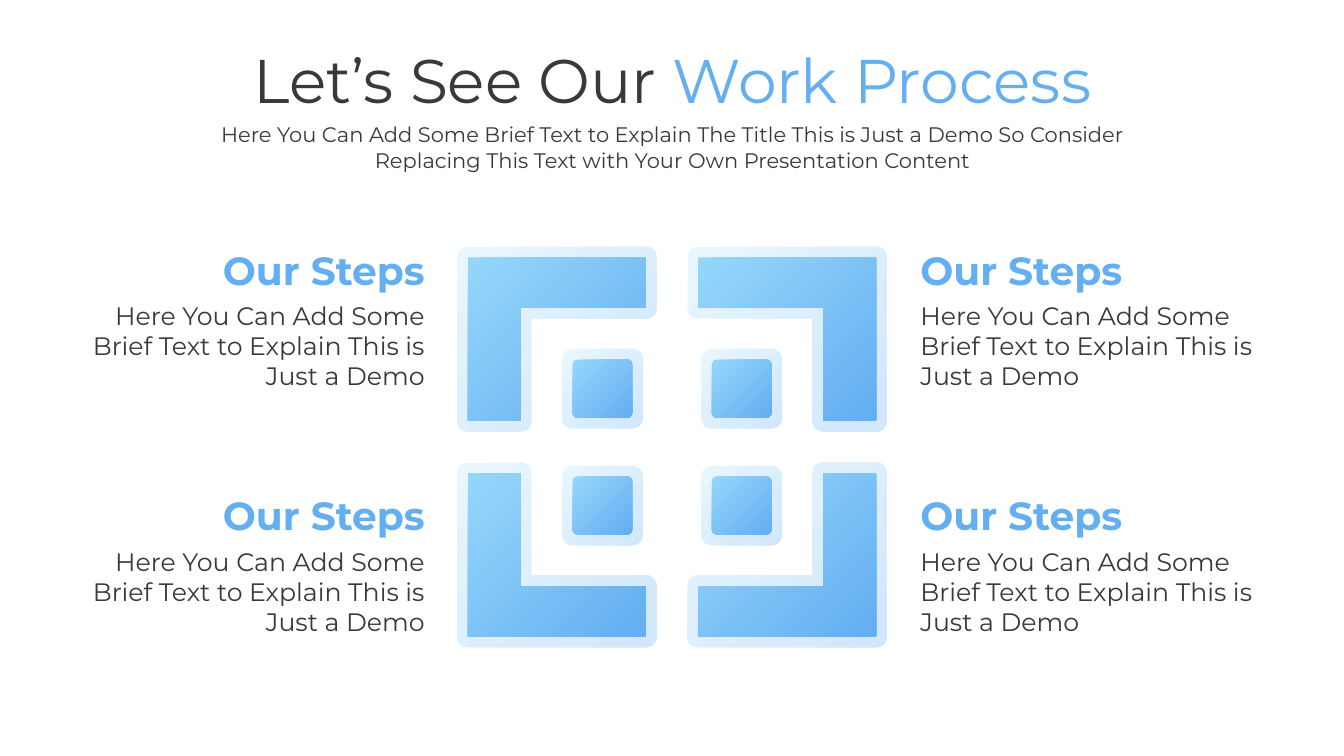
from itertools import product
from math import cos, pi, sin

from lxml import etree
from pptx import Presentation, util as u
from pptx.dml import color
from pptx.enum import shapes, text
from pptx.oxml import ns

W, H = u.Inches(13.33), u.Inches(7.5)
FONT = "Montserrat"
DARK, BLUE = "3B3838", "64AEF2"
CORE, HALO = (BLUE, "95D7FA"), ("D1E7FB", "E8F6FE")
MID_X, MID_Y = 50, 59.13
INSET_X, INSET_Y = 0.79, 1.4
RADIUS = u.Inches(0.1)
ARC_STEPS = 8
DEMO = "Here You Can Add Some Brief Text to Explain This is Just a Demo"
SUBTITLE = ("Here You Can Add Some Brief Text to Explain The Title This is Just a Demo "
            "So Consider Replacing This Text with Your Own Presentation Content")


def rgb(value):
    return color.RGBColor.from_string(value)


def px(share):
    return round(W * share / 100)


def py(share):
    return round(H * share / 100)


def add_text(s, box, runs, size, align, bold=False):
    left, top, width, height = box
    shape = s.shapes.add_textbox(px(left), py(top), px(width), py(height))
    tf = shape.text_frame
    tf.word_wrap = True
    tf.auto_size = text.MSO_AUTO_SIZE.SHAPE_TO_FIT_TEXT
    p = tf.paragraphs[0]
    p.alignment = align
    p.font.name, p.font.size, p.font.bold = FONT, u.Pt(size), bold
    for words, shade in runs:
        r = p.add_run()
        r.text = words
        r.font.color.rgb = rgb(shade)


def paint(shape, shades):
    shape.shadow.inherit = False
    shape.line.fill.background()
    shape.fill.gradient()
    for stop, shade in zip(shape.fill.gradient_stops, shades):
        stop.color.rgb = rgb(shade)
    grad = shape._element.spPr.find(ns.qn("a:gradFill"))
    grad.remove(grad.find(ns.qn("a:lin")))
    radial = etree.SubElement(grad, ns.qn("a:path"), {"path": "circle"})
    etree.SubElement(radial, ns.qn("a:fillToRect"), {"l": "100000", "t": "100000"})
    etree.SubElement(grad, ns.qn("a:tileRect"), {"r": "-100000", "b": "-100000"})


def toward(start, end, distance):
    dx, dy = end[0] - start[0], end[1] - start[1]
    length = abs(dx) + abs(dy)
    return start[0] + dx * distance / length, start[1] + dy * distance / length


def round_corner(before, corner, after):
    a, b = toward(corner, before, RADIUS), toward(corner, after, RADIUS)
    for step in range(ARC_STEPS + 1):
        angle = pi / 2 * step / ARC_STEPS
        yield tuple(a[i] + b[i] - corner[i] + cos(angle) * (corner[i] - b[i])
                    + sin(angle) * (corner[i] - a[i]) for i in (0, 1))


def add_bracket(s, side, level, inset, shades, rounded):
    far_x, arm_x, near_x = 15.98 - inset * INSET_X, 10.47 + inset * INSET_X, 1.16 + inset * INSET_X
    far_y, arm_y, near_y = 26.47 - inset * INSET_Y, 17 + inset * INSET_Y, 2.07 + inset * INSET_Y
    offsets = [(far_x, far_y), (near_x, far_y), (near_x, arm_y),
               (arm_x, arm_y), (arm_x, near_y), (far_x, near_y)]
    corners = [(px(MID_X + side * x), py(MID_Y + level * y)) for x, y in offsets]
    points = []
    for i, corner in enumerate(corners):
        if rounded and i != 3:
            points += round_corner(corners[i - 1], corner, corners[(i + 1) % 6])
        else:
            points.append(corner)
    builder = s.shapes.build_freeform(*points[0])
    builder.add_line_segments(points[1:], close=True)
    paint(builder.convert_to_shape(), shades)


def add_tile(s, side, level, inset, shades, rounding):
    width, height = 6 - 2 * inset * INSET_X, 10.47 - 2 * inset * INSET_Y
    left = MID_X + side * 5.18 - width / 2
    top = MID_Y + level * 7.73 - height / 2
    shape = s.shapes.add_shape(shapes.MSO_SHAPE.ROUNDED_RECTANGLE,
                               px(left), py(top), px(width), py(height))
    shape.adjustments[0] = rounding
    paint(shape, shades)


def add_step(s, side, level):
    left, width, align = ((3.68, 28.66, text.PP_ALIGN.RIGHT) if side < 0
                          else (67.74, 28.06, text.PP_ALIGN.LEFT))
    top = 31.87 if level < 0 else 64.4
    add_text(s, (left, top, width, 7.6), [("Our Steps", BLUE)], 28, align, bold=True)
    add_text(s, (left, top + 7.2, width, 13.47), [(DEMO, DARK)], 18, align)


def main():
    prs = Presentation()
    prs.slide_width, prs.slide_height = W, H
    s = prs.slides.add_slide(prs.slide_layouts[6])
    for side, level in product((-1, 1), repeat=2):
        add_step(s, side, level)
        add_bracket(s, side, level, 0, HALO, rounded=True)
        add_bracket(s, side, level, 1, CORE, rounded=False)
        add_tile(s, side, level, 0, HALO, 0.13)
        add_tile(s, side, level, 1, CORE, 0.08)
    center = text.PP_ALIGN.CENTER
    add_text(s, (12.08, 4.93, 75.92, 11.2),
             [("Let’s See Our ", DARK), ("Work Process", BLUE)], 44, center)
    add_text(s, (12.08, 15.47, 75.92, 8.13), [(SUBTITLE, DARK)], 15, center)
    prs.save("out.pptx")


if __name__ == "__main__":
    main()
